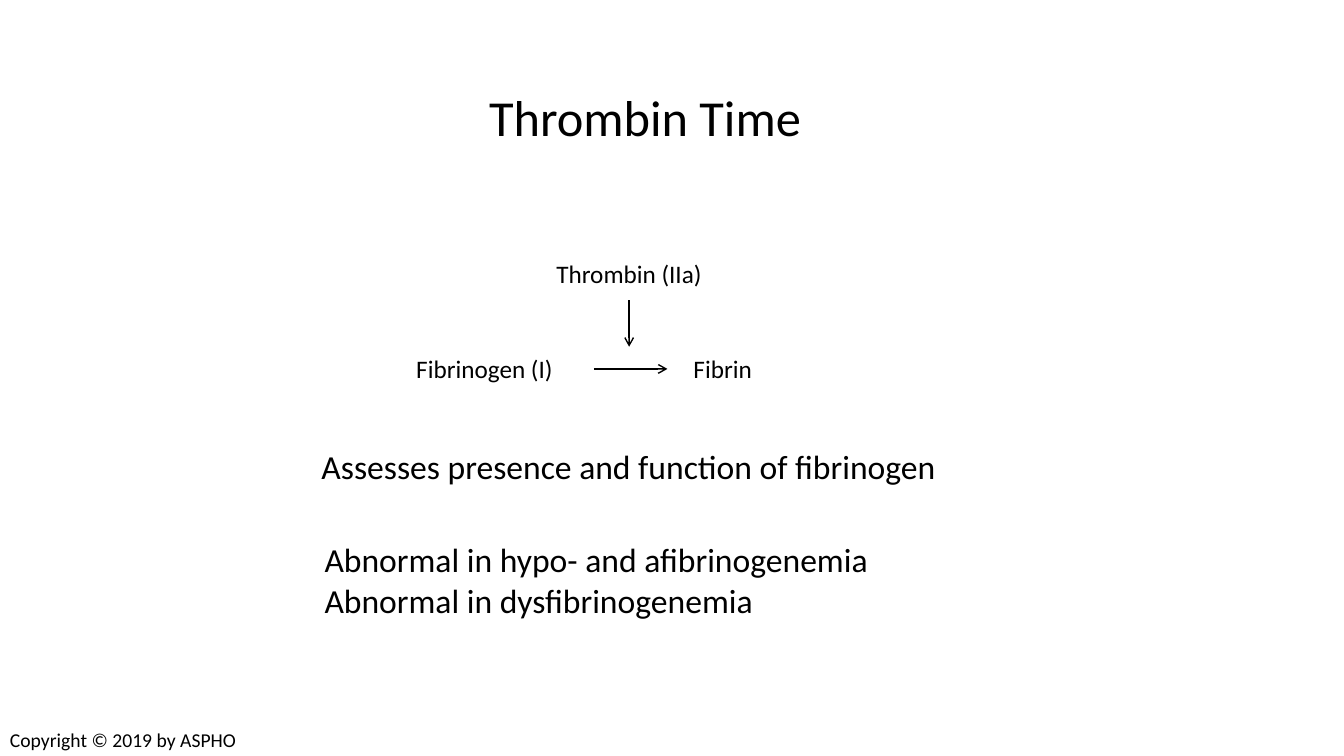
"""Build the Thrombin Time slide with its reaction diagram and notes."""
from dataclasses import dataclass

from lxml import etree
from pptx import Presentation
from pptx.dml.color import RGBColor
from pptx.enum.shapes import MSO_CONNECTOR
from pptx.enum.text import MSO_ANCHOR, MSO_AUTO_SIZE, PP_ALIGN
from pptx.oxml.ns import qn
from pptx.util import Emu, Pt

STRAIGHT = MSO_CONNECTOR.STRAIGHT
LEFT = PP_ALIGN.LEFT
TOP, MIDDLE = MSO_ANCHOR.TOP, MSO_ANCHOR.MIDDLE
NO_FIT = MSO_AUTO_SIZE.NONE
EMU_PER_PX = 9144
SLIDE_WIDTH, SLIDE_HEIGHT = 1333, 750
TITLE_ONLY = 5
FONT = "Calibri"
COLORS = {"ink": "000000", "paper": "FFFFFF"}


@dataclass(frozen=True)
class Label:
    lines: tuple[str, ...]
    left: int
    top: int
    width: int
    height: int
    size: int


@dataclass(frozen=True)
class Arrow:
    start: tuple[int, int]
    end: tuple[int, int]


TITLE = Label(("Thrombin Time",), 475, 75, 407, 88, 36)
LABELS = (
    Label(("Thrombin (IIa)",), 542, 251, 193, 40, 18),
    Label(("Fibrinogen (I)",), 403, 346, 171, 40, 18),
    Label(("Fibrin",), 678, 346, 100, 40, 18),
    Label(("Assesses presence and function of fibrinogen",), 309, 437, 708, 50, 24),
    Label(
        ("Abnormal in hypo- and afibrinogenemia", "Abnormal in dysfibrinogenemia"),
        312, 530, 685, 91, 24,
    ),
    Label(("Copyright © 2019 by ASPHO",), 0, 717, 248, 34, 14),
)
ARROWS = (
    Arrow((624, 298), (624, 344)),
    Arrow((589, 366), (662, 366)),
)


def px(length: int) -> Emu:
    return Emu(length * EMU_PER_PX)


def color(name: str) -> RGBColor:
    return RGBColor.from_string(COLORS[name])


def write(frame, lines: tuple[str, ...], *, size: int, anchor=TOP, spacing: float = 1.0) -> None:
    frame.word_wrap = True
    frame.auto_size = NO_FIT
    frame.vertical_anchor = anchor
    for index, line in enumerate(lines):
        para = frame.add_paragraph() if index else frame.paragraphs[0]
        para.alignment = LEFT
        para.line_spacing = spacing
        span = para.add_run()
        span.text = line
        span.font.name = FONT
        span.font.size = Pt(size)
        span.font.color.rgb = color("ink")


def place_title(page, label: Label) -> None:
    box = page.shapes.title
    box.left, box.top = px(label.left), px(label.top)
    box.width, box.height = px(label.width), px(label.height)
    write(box.text_frame, label.lines, size=label.size, anchor=MIDDLE, spacing=0.9)


def add_label(page, label: Label) -> None:
    box = page.shapes.add_textbox(
        px(label.left), px(label.top), px(label.width), px(label.height)
    )
    write(box.text_frame, label.lines, size=label.size)


def add_arrow(page, arrow: Arrow) -> None:
    connector = page.shapes.add_connector(
        STRAIGHT, *map(px, arrow.start), *map(px, arrow.end)
    )
    connector.line.color.rgb = color("ink")
    connector.line.width = Pt(1)
    properties = connector.line._get_or_add_ln()
    etree.SubElement(properties, qn("a:tailEnd"), type="arrow")
    etree.SubElement(properties.getparent(), qn("a:effectLst"))


def main() -> None:
    deck = Presentation()
    deck.slide_width, deck.slide_height = px(SLIDE_WIDTH), px(SLIDE_HEIGHT)
    page = deck.slides.add_slide(deck.slide_layouts[TITLE_ONLY])
    page.background.fill.solid()
    page.background.fill.fore_color.rgb = color("paper")
    place_title(page, TITLE)
    for label in LABELS:
        add_label(page, label)
    for arrow in ARROWS:
        add_arrow(page, arrow)
    deck.save("out.pptx")


if __name__ == "__main__":
    main()
